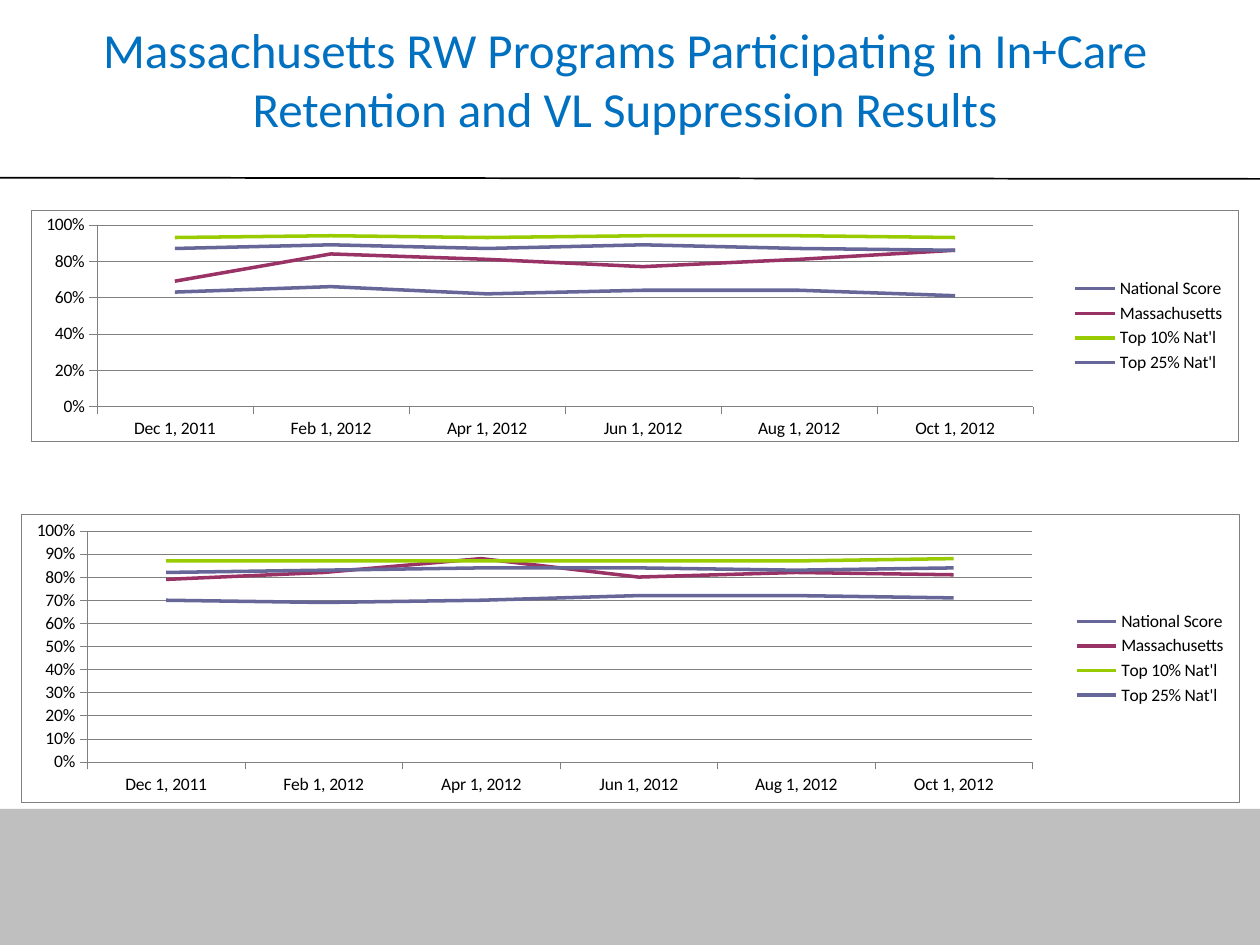
from lxml import etree
from pptx import Presentation
from pptx.chart.data import CategoryChartData
from pptx.dml.color import RGBColor
from pptx.enum.chart import XL_CHART_TYPE, XL_LEGEND_POSITION, XL_MARKER_STYLE, XL_TICK_MARK
from pptx.enum.shapes import MSO_CONNECTOR, MSO_SHAPE
from pptx.enum.text import MSO_ANCHOR, PP_ALIGN
from pptx.oxml import parse_xml
from pptx.oxml.ns import nsdecls, qn
from pptx.util import Inches, Pt

LINE_CHART = XL_CHART_TYPE.LINE
LEGEND_RIGHT = XL_LEGEND_POSITION.RIGHT
NO_MARKER = XL_MARKER_STYLE.NONE
TICK_OUT, TICK_NONE = XL_TICK_MARK.OUTSIDE, XL_TICK_MARK.NONE
STRAIGHT = MSO_CONNECTOR.STRAIGHT
RECTANGLE = MSO_SHAPE.RECTANGLE
MIDDLE = MSO_ANCHOR.MIDDLE
CENTER = PP_ALIGN.CENTER

FONT = "Calibri"
BLACK, GRAY = "000000", "808080"
TITLE_LINES = ["Massachusetts RW Programs Participating in In+Care",
               "Retention and VL Suppression Results"]
DATES = ["Dec 1, 2011", "Feb 1, 2012", "Apr 1, 2012",
         "Jun 1, 2012", "Aug 1, 2012", "Oct 1, 2012"]
GROUPS = [("National Score", "666699"), ("Massachusetts", "993366"),
          ("Top 10% Nat'l", "99CC00"), ("Top 25% Nat'l", "666699")]

# Frame in inches, inner plot area as fractions of it, axis step, scores by group
RETENTION = ((0.25, 1.67, 9.58, 1.83), (0.054, 0.062, 0.776, 0.79), 0.2, [
    (0.63, 0.66, 0.62, 0.64, 0.64, 0.61),
    (0.69, 0.84, 0.81, 0.77, 0.81, 0.86),
    (0.93, 0.94, 0.93, 0.94, 0.94, 0.93),
    (0.87, 0.89, 0.87, 0.89, 0.87, 0.86)])
SUPPRESSION = ((0.17, 4.08, 9.67, 2.29), (0.054, 0.058, 0.776, 0.802), 0.1, [
    (0.7, 0.69, 0.7, 0.72, 0.72, 0.71),
    (0.79, 0.82, 0.88, 0.8, 0.82, 0.81),
    (0.87, 0.87, 0.87, 0.87, 0.87, 0.88),
    (0.82, 0.83, 0.84, 0.84, 0.83, 0.84)])

FRAME_STYLE = (
    f'<c:spPr {nsdecls("c", "a")}>'
    '<a:solidFill><a:srgbClr val="FFFFFF"/></a:solidFill>'
    '<a:ln w="3175"><a:solidFill><a:srgbClr val="808080"/></a:solidFill></a:ln></c:spPr>')
PLOT_STYLE = (
    f'<c:spPr {nsdecls("c", "a")}>'
    '<a:solidFill><a:srgbClr val="FFFFFF"/></a:solidFill><a:ln><a:noFill/></a:ln></c:spPr>')


def color(hex_value):
    return RGBColor.from_string(hex_value)


def style_line(line, hex_value, points):
    line.color.rgb = color(hex_value)
    line.width = Pt(points)


prs = Presentation()
prs.slide_width, prs.slide_height = Inches(10), Inches(7.5)
slide = prs.slides.add_slide(prs.slide_layouts[6])

# Footer band and rule under the title
footer = slide.shapes.add_shape(RECTANGLE, Inches(0), Inches(6.42), Inches(10), Inches(1.08))
footer.shadow.inherit = False
footer.fill.solid()
footer.fill.fore_color.rgb = color("BFBFBF")
footer.line.fill.background()

rule = slide.shapes.add_connector(STRAIGHT, Inches(0), Inches(1.41), Inches(10), Inches(1.42))
style_line(rule.line, BLACK, 1)
etree.SubElement(rule.element.spPr, qn("a:effectLst"))

# Title
title = slide.shapes.add_textbox(Inches(0.17), Inches(0.08), Inches(9.58), Inches(1.08))
title.text_frame.word_wrap = True
title.text_frame.vertical_anchor = MIDDLE
heading = title.text_frame.paragraphs[0]
heading.alignment = CENTER
for index, words in enumerate(TITLE_LINES):
    if index:
        heading.add_line_break()
    run = heading.add_run()
    run.text = words
    run.font.name, run.font.size = FONT, Pt(28)
    run.font.color.rgb = color("0070C0")

# Charts
for frame, plot_box, step, scores in (RETENTION, SUPPRESSION):
    data = CategoryChartData(number_format="0%")
    data.categories = DATES
    for (group, _), values in zip(GROUPS, scores):
        data.add_series(group, values)
    chart = slide.shapes.add_chart(LINE_CHART, *map(Inches, frame), data).chart
    chart.has_title = False
    chart.font.name, chart.font.size = FONT, Pt(10)
    chart.font.color.rgb = color(BLACK)

    chart.has_legend = True
    chart.legend.position = LEGEND_RIGHT
    chart.legend.include_in_layout = False

    chart.plots[0].vary_by_categories = False
    for series, (_, group_color) in zip(chart.plots[0].series, GROUPS):
        style_line(series.format.line, group_color, 2)
        series.marker.style = NO_MARKER
        series.smooth = False

    for axis in (chart.category_axis, chart.value_axis):
        axis.major_tick_mark, axis.minor_tick_mark = TICK_OUT, TICK_NONE
        style_line(axis.format.line, GRAY, 0.25)
    score_axis = chart.value_axis
    score_axis.minimum_scale, score_axis.maximum_scale = 0, 1
    score_axis.major_unit = step
    score_axis.tick_labels.number_format = "0%"
    score_axis.tick_labels.number_format_is_linked = False
    score_axis.has_major_gridlines = True
    style_line(score_axis.major_gridlines.format.line, GRAY, 0.25)

    chart_part = chart.element.find(qn("c:chart"))
    chart_part.addnext(parse_xml(FRAME_STYLE))
    plot_area = chart_part.find(qn("c:plotArea"))
    plot_area.append(parse_xml(PLOT_STYLE))
    for automatic_layout in plot_area.findall(qn("c:layout")):
        plot_area.remove(automatic_layout)
    layout = etree.Element(qn("c:layout"))
    manual = etree.SubElement(layout, qn("c:manualLayout"))
    settings = [("layoutTarget", "inner"), ("xMode", "edge"), ("yMode", "edge"),
                *zip("xywh", plot_box)]
    for tag, value in settings:
        etree.SubElement(manual, qn(f"c:{tag}"), val=str(value))
    plot_area.insert(0, layout)

prs.save("out.pptx")
